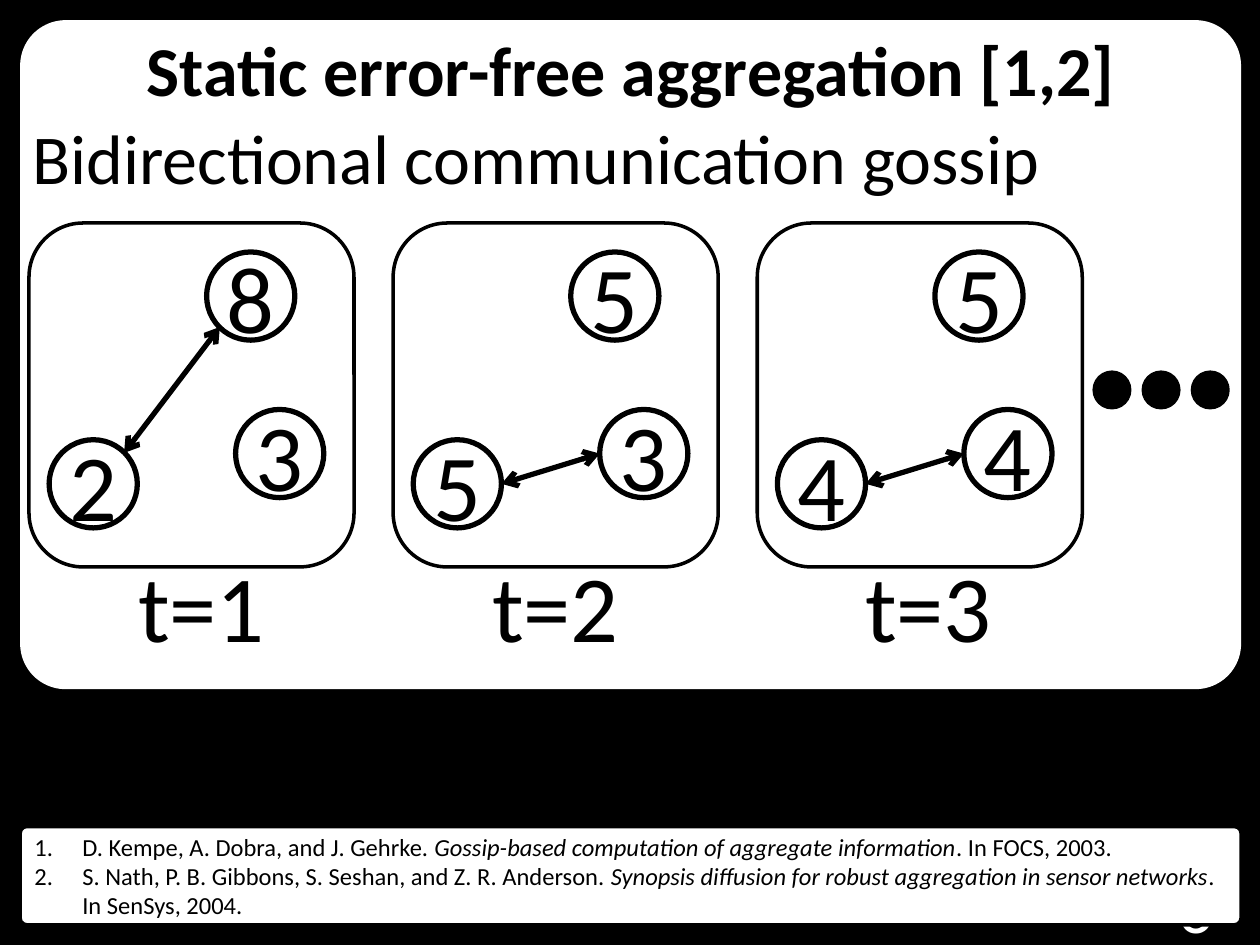
from dataclasses import dataclass

from lxml import etree
from pptx import Presentation, util as u
from pptx.dml.color import RGBColor
from pptx.enum import shapes, text
from pptx.oxml.ns import qn


@dataclass(frozen=True)
class Theme:
    font: str = "Calibri"
    ink: RGBColor = RGBColor(0, 0, 0)
    paper: RGBColor = RGBColor(255, 255, 255)
    heading: int = 40
    figure: int = 54
    reference: int = 14
    frame_line: int = 2
    node_line: int = 3


THEME = Theme()

# Content
PAGE_NUMBER = "6"
TITLE = "Static error-free aggregation [1,2]"
SUBTITLE = "Bidirectional communication gossip"
# Each step: label, its centre from the frame's left, node values, nodes that talk
STEPS = [
    ("t=1", 1.37, {"top": "8", "left": "2", "right": "3"}, ("top", "left")),
    ("t=2", 1.29, {"top": "5", "left": "5", "right": "3"}, ("right", "left")),
    ("t=3", 1.36, {"top": "5", "left": "4", "right": "4"}, ("right", "left")),
]
REFERENCES = [
    ("D. Kempe, A. Dobra, and J. Gehrke. ",
     "Gossip-based computation of aggregate information", ". In FOCS, 2003."),
    ("S. Nath, P. B. Gibbons, S. Seshan, and Z. R. Anderson. ",
     "Synopsis diffusion for robust aggregation in sensor networks",
     ". In SenSys, 2004."),
]

# Layout, in inches
WIDTH, HEIGHT = 10, 7.5
MARGIN, PANEL_W = 0.16, 9.69
CORNER = 0.068
FRAME_X, FRAME_Y, FRAME_W, FRAME_H, FRAME_PITCH = 0.23, 1.77, 2.58, 2.73, 2.89
NODE = 0.7
NODE_AT = {"top": (1.41, 0.23), "left": (0.16, 1.72), "right": (1.64, 1.48)}
# Arrow ends on a node's rim, as shares of the node's size
RIM = {
    ("top", "left"): ((0.15, 0.85), (0.85, 0.15)),
    ("right", "left"): ((0, 0.5), (1, 0.5)),
}
LABEL_Y, LABEL_W, LABEL_H = 4.3, 1.8, 1.01
DOT, DOT_X, DOT_Y, DOT_PITCH, DOT_COUNT = 0.31, 8.67, 2.94, 0.39, 3
INDENT = 0.38

prs = Presentation()
prs.slide_width, prs.slide_height = u.Inches(WIDTH), u.Inches(HEIGHT)
slide = prs.slides.add_slide(prs.slide_layouts[6])
slide.background.fill.solid()
slide.background.fill.fore_color.rgb = THEME.ink


def style(font, size, color=THEME.ink, bold=False):
    font.name, font.size, font.bold = THEME.font, u.Pt(size), bold
    font.color.rgb = color


def add_shape(kind, box, fill=None, line=None, corner=None):
    shape = slide.shapes.add_shape(kind, *map(u.Inches, box))
    shape.shadow.inherit = False
    if corner is not None:
        shape.adjustments[0] = corner
    if fill is None:
        shape.fill.background()
    else:
        shape.fill.solid()
        shape.fill.fore_color.rgb = fill
    if line is None:
        shape.line.fill.background()
    else:
        shape.line.color.rgb = THEME.ink
        shape.line.width = u.Pt(line)
    return shape


def write(shape, words, size, color=THEME.ink, align=text.PP_ALIGN.CENTER, bold=False):
    paragraph = shape.text_frame.paragraphs[0]
    paragraph.text, paragraph.alignment = words, align
    style(paragraph.font, size, color, bold)


def add_text(box, words, size, **options):
    label = slide.shapes.add_textbox(*map(u.Inches, box))
    label.text_frame.word_wrap = True
    write(label, words, size, **options)


def add_arrow(start, end):
    arrow = slide.shapes.add_connector(
        shapes.MSO_CONNECTOR.STRAIGHT, *map(u.Inches, (*start, *end)))
    arrow.line.color.rgb = THEME.ink
    arrow.line.width = u.Pt(THEME.node_line)
    line = arrow.line._get_or_add_ln()
    for end_tag in ("a:headEnd", "a:tailEnd"):
        etree.SubElement(line, qn(end_tag), type="arrow")
    etree.SubElement(arrow._element.spPr, qn("a:effectLst"))


ROUNDED = shapes.MSO_SHAPE.ROUNDED_RECTANGLE
OVAL = shapes.MSO_SHAPE.OVAL

# Page number in the bottom right corner, behind the references
corner_box = add_shape(ROUNDED, (WIDTH - 1.02, HEIGHT - 0.63, 1.02, 0.63), THEME.ink)
write(corner_box, PAGE_NUMBER, THEME.heading, THEME.paper)

# Main panel with its headings
add_shape(ROUNDED, (MARGIN, MARGIN, PANEL_W, 5.31), THEME.paper, corner=CORNER)
add_text((MARGIN, MARGIN, PANEL_W, 0.77), TITLE, THEME.heading, bold=True)
add_text((MARGIN, 0.86, PANEL_W, 0.77), SUBTITLE, THEME.heading,
         align=text.PP_ALIGN.LEFT)

# References
references = add_shape(ROUNDED, (MARGIN, 6.56, PANEL_W, 0.78), THEME.paper,
                       THEME.frame_line, CORNER)
frame = references.text_frame
frame.vertical_anchor = text.MSO_ANCHOR.MIDDLE
for index, (authors, work, venue) in enumerate(REFERENCES):
    entry = frame.add_paragraph() if index else frame.paragraphs[0]
    entry.alignment = text.PP_ALIGN.LEFT
    style(entry.font, THEME.reference)
    for part in (authors, work, venue):
        run = entry.add_run()
        run.text = part
        run.font.italic = part == work
    props = entry._p.get_or_add_pPr()
    props.set("marL", str(u.Inches(INDENT)))
    props.set("indent", str(-u.Inches(INDENT)))
    numbering = etree.Element(qn("a:buAutoNum"), type="arabicPeriod")
    props.insert(0, numbering)

# Gossip steps: nodes, the exchange between two of them, frame and label
for column, (label, label_centre, values, pair) in enumerate(STEPS):
    left = FRAME_X + column * FRAME_PITCH
    corners = {name: (left + dx, FRAME_Y + dy) for name, (dx, dy) in NODE_AT.items()}
    for name, value in values.items():
        node = add_shape(OVAL, (*corners[name], NODE, NODE), line=THEME.node_line)
        body = node.text_frame
        body.margin_left = body.margin_right = body.margin_top = body.margin_bottom = 0
        body.word_wrap = False
        body.vertical_anchor = text.MSO_ANCHOR.MIDDLE
        write(node, value, THEME.figure)
    add_arrow(*[
        (corners[name][0] + NODE * across, corners[name][1] + NODE * down)
        for name, (across, down) in zip(pair, RIM[pair])
    ])
    add_shape(ROUNDED, (left, FRAME_Y, FRAME_W, FRAME_H), line=THEME.frame_line)
    add_text((left + label_centre - LABEL_W / 2, LABEL_Y, LABEL_W, LABEL_H),
             label, THEME.figure)

# Dots: the steps go on
for index in range(DOT_COUNT):
    add_shape(OVAL, (DOT_X + index * DOT_PITCH, DOT_Y, DOT, DOT), THEME.ink)

prs.save("out.pptx")
